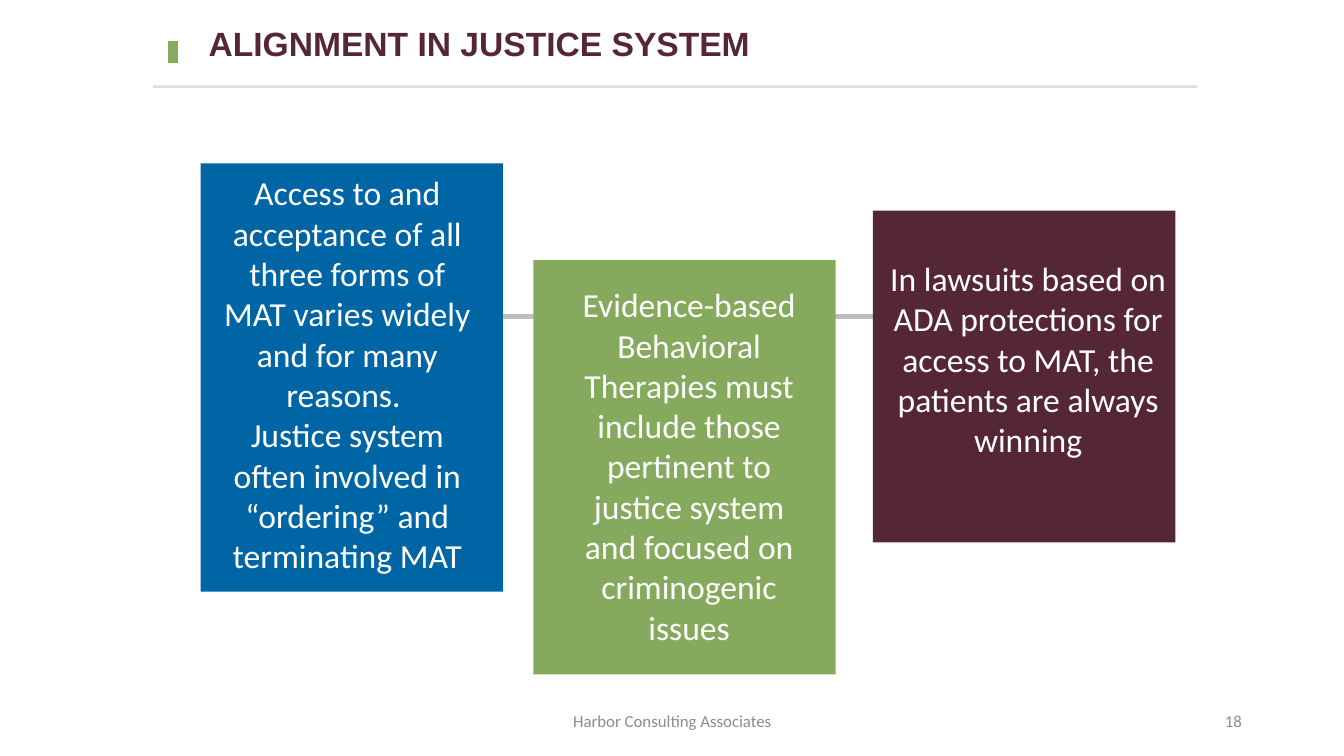
from dataclasses import dataclass

from lxml import etree
from pptx import Presentation
from pptx.dml.color import RGBColor
from pptx.enum.shapes import MSO_CONNECTOR, MSO_SHAPE
from pptx.enum.text import MSO_ANCHOR, MSO_AUTO_SIZE, PP_ALIGN
from pptx.oxml.ns import qn
from pptx.util import Inches, Pt

STRAIGHT, RECTANGLE = MSO_CONNECTOR.STRAIGHT, MSO_SHAPE.RECTANGLE
LEFT, CENTER, RIGHT = PP_ALIGN.LEFT, PP_ALIGN.CENTER, PP_ALIGN.RIGHT
TOP, MIDDLE = MSO_ANCHOR.TOP, MSO_ANCHOR.MIDDLE
FIT_SHAPE, FIXED = MSO_AUTO_SIZE.SHAPE_TO_FIT_TEXT, MSO_AUTO_SIZE.NONE
WIDTH, HEIGHT = Inches(13.33), Inches(7.5)
CARD_WIDTH = 22.5
FOOTER_TOP, FOOTER_HEIGHT = 92.67, 5.33


# Places and lengths are percentages of the slide's width and height
@dataclass(frozen=True)
class Area:
    left: float
    top: float
    width: float
    height: float

    def lengths(self) -> tuple[int, int, int, int]:
        return (across(self.left), down(self.top),
                across(self.width), down(self.height))


@dataclass(frozen=True)
class Card:
    area: Area
    color: str
    text_area: Area
    paragraphs: tuple[str, ...]


@dataclass(frozen=True)
class Rule:
    start: tuple[float, float]
    end: tuple[float, float]
    color: str
    points: float
    opacity: int = 100


@dataclass(frozen=True)
class Label:
    area: Area
    paragraphs: tuple[str, ...]
    font: dict
    color: str
    align: PP_ALIGN = CENTER
    anchor: MSO_ANCHOR = TOP
    fit: MSO_AUTO_SIZE = FIT_SHAPE


BODY = {"name": "Calibri", "size": Pt(24)}
SMALL = {"name": "Calibri", "size": Pt(12)}
HEADING = {"name": "Arial", "size": Pt(24), "bold": True}

CARD_LINK = Rule((30.08, 41.87), (76.2, 41.87), "BFBFBF", 3)
HEADER_RULES = [
    Rule((12.9, 5.47), (12.9, 8.4), "86AB5D", 7),
    Rule((11.4, 11.47), (89.1, 11.47), "000000", 1.75, opacity=12),
]

CARDS = [
    Card(Area(14.93, 21.6, CARD_WIDTH, 56.67), "0065A5",
         Area(15.9, 22.13, 19.88, 55.2),
         ("Access to and acceptance of all three forms of MAT varies widely "
          "and for many reasons. ",
          "Justice system often involved in “ordering” and terminating MAT")),
    Card(Area(39.68, 34.4, CARD_WIDTH, 54.8), "85AA5D",
         Area(41.33, 36.93, 19.88, 49.87),
         ("Evidence-based Behavioral Therapies must include those pertinent "
          "to justice system and focused on criminogenic issues",)),
    Card(Area(64.95, 27.87, CARD_WIDTH, 43.87), "552633",
         Area(65.25, 33.47, CARD_WIDTH, 28.27),
         ("In lawsuits based on ADA protections for access to MAT, the "
          "patients are always winning",)),
]

LABELS = [
    Label(Area(14.78, 2.4, 72.9, 6.67), ("ALIGNMENT IN JUSTICE SYSTEM",),
          HEADING, "552733", LEFT),
    Label(Area(33.15, FOOTER_TOP, 33.75, FOOTER_HEIGHT),
          ("Harbor Consulting Associates",),
          SMALL, "8C8C8C", CENTER, MIDDLE, FIXED),
    Label(Area(70.65, FOOTER_TOP, 22.5, FOOTER_HEIGHT), ("18",),
          SMALL, "8C8C8C", RIGHT, MIDDLE, FIXED),
]


def across(share: float) -> int:
    return round(WIDTH * share / 100)


def down(share: float) -> int:
    return round(HEIGHT * share / 100)


def paint(color_format, color: str) -> None:
    color_format.rgb = RGBColor.from_string(color)


def set_values(target, values: dict) -> None:
    for name, value in values.items():
        setattr(target, name, value)


def draw_rule(page, rule: Rule) -> None:
    (x1, y1), (x2, y2) = rule.start, rule.end
    connector = page.shapes.add_connector(
        STRAIGHT, across(x1), down(y1), across(x2), down(y2))
    connector.line.width = Pt(rule.points)
    connector.line.fill.solid()
    paint(connector.line.color, rule.color)
    properties = connector._element.spPr
    if rule.opacity < 100:
        color = properties.find(".//" + qn("a:srgbClr"))
        etree.SubElement(color, qn("a:alpha"), val=str(rule.opacity * 1000))
    etree.SubElement(properties, qn("a:effectLst"))


def draw_label(page, label: Label) -> None:
    box = page.shapes.add_textbox(*label.area.lengths())
    frame = box.text_frame
    set_values(frame, {"word_wrap": True, "auto_size": label.fit,
                       "vertical_anchor": label.anchor})
    for index, text in enumerate(label.paragraphs):
        para = frame.add_paragraph() if index else frame.paragraphs[0]
        para.alignment = label.align
        span = para.add_run()
        span.text = text
        set_values(span.font, label.font)
        paint(span.font.color, label.color)


def draw_card(page, card: Card) -> None:
    box = page.shapes.add_shape(RECTANGLE, *card.area.lengths())
    box.shadow.inherit = False
    box.fill.solid()
    paint(box.fill.fore_color, card.color)
    box.line.fill.background()
    draw_label(page, Label(card.text_area, card.paragraphs, BODY, "FFFFFF"))


def main() -> None:
    deck = Presentation()
    set_values(deck, {"slide_width": WIDTH, "slide_height": HEIGHT})
    page = deck.slides.add_slide(deck.slide_layouts[6])

    # Cards over the line that joins them
    draw_rule(page, CARD_LINK)
    for card in CARDS:
        draw_card(page, card)

    # Header and footer
    for rule in HEADER_RULES:
        draw_rule(page, rule)
    for label in LABELS:
        draw_label(page, label)

    deck.save("out.pptx")


if __name__ == "__main__":
    main()
